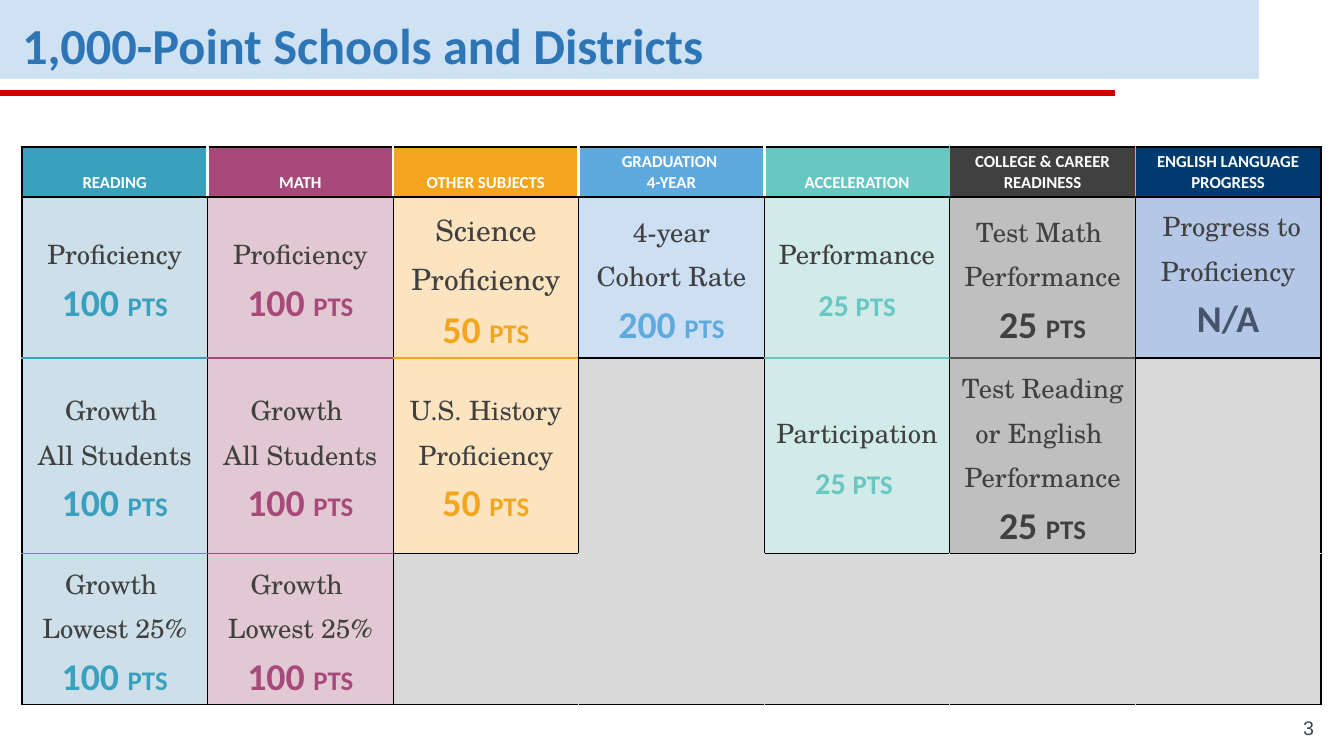
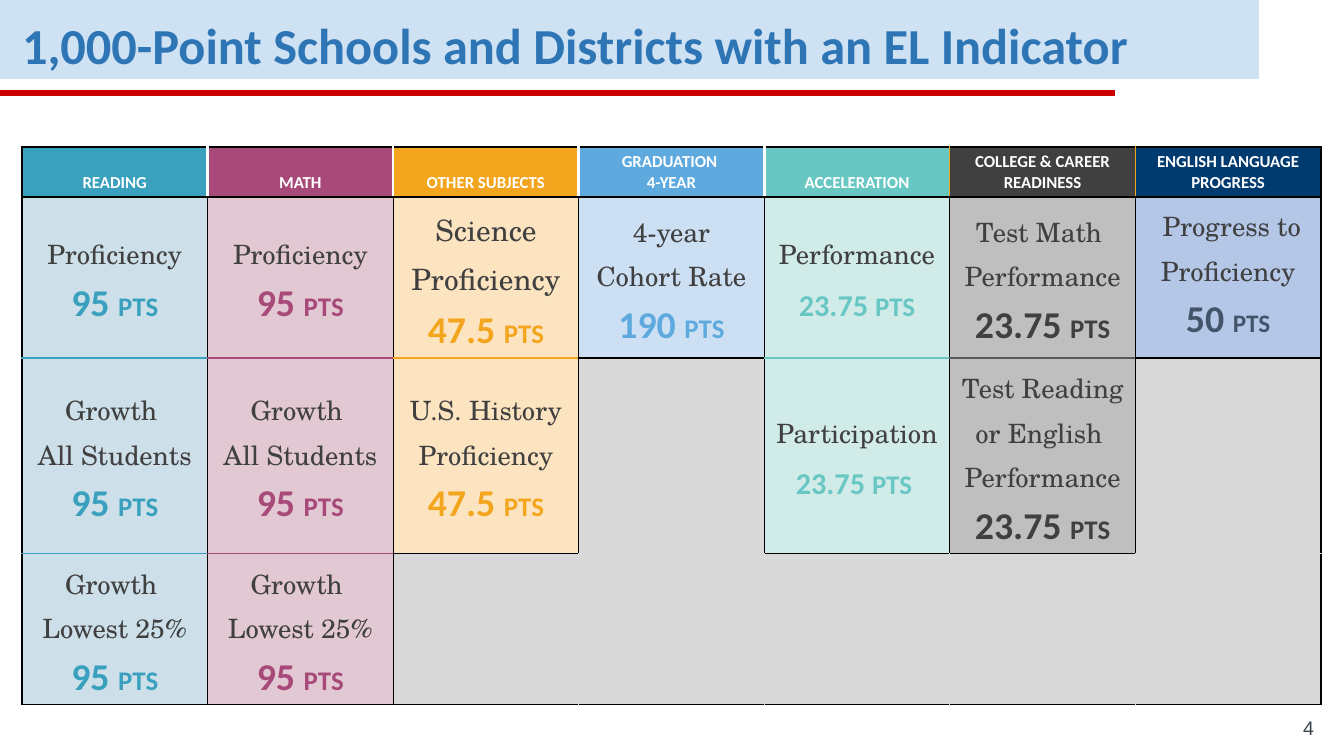
from dataclasses import dataclass

from lxml import etree
from pptx import Presentation
from pptx.dml.color import RGBColor
from pptx.enum import shapes, text
from pptx.oxml import ns
from pptx import util as u

EMU_PER_PX = 914400 / 100.8
HEADING_FONT = "Calibri"
LABEL_FONT = "TeX Gyre Schola"
COLORS = {
    "band": "CFE2F3", "rule": "CC0000", "title": "2E75B6", "number": "3A484F",
    "white": "FFFFFF", "black": "000000", "label": "404040",
    "empty": "D9D9D9", "orange": "F3A51D",
}
ROW_HEIGHTS = (50, 161, 196, 151)


@dataclass(frozen=True)
class Span:
    text: str
    size: int
    small_caps: bool = False


@dataclass(frozen=True)
class Goal:
    label: str
    share: int = 0
    unit: str = "pts"
    size: int = 19


@dataclass(frozen=True)
class Column:
    heading: str
    accent: str
    tint: str
    goals: tuple[Goal, ...]
    points_color: str
    divider: str
    small_number: bool = False


@dataclass(frozen=True)
class Board:
    title: str
    number: int
    scale: float
    language_points: tuple[Span, ...]


@dataclass(frozen=True)
class Border:
    color: str
    width: float = 1


def core_goals() -> tuple[Goal, ...]:
    return (Goal("Proficiency", 100), Goal("Growth \nAll Students", 100),
            Goal("Growth \nLowest 25%", 100))


COLUMNS = (
    Column("READING", "39A0BE", "CDDFE9", core_goals(), "39A0BE", "39A0BE"),
    Column("MATH", "A74A7A", "E1C8D2", core_goals(), "A74A7A", "A74A7A"),
    Column("OTHER SUBJECTS", "F3A51D", "FCE4C1",
           (Goal("Science\nProficiency", 50, size=21),
            Goal("U.S. History Proficiency", 50)), "F3A51D", "F3A51D"),
    Column("GRADUATION \n4-YEAR", "5EAADE", "CCDFF3",
           (Goal("4-year Cohort Rate", 200),), "5EAADE", "000000"),
    Column("ACCELERATION", "68C7C3", "D1EBE9",
           (Goal("Performance", 25), Goal("Participation", 25, "pts ")),
           "68C7C3", "68C7C3", small_number=True),
    Column("COLLEGE & CAREER READINESS", "404040", "BFBFBF",
           (Goal("Test Math \nPerformance", 25),
            Goal("Test Reading or English \nPerformance", 25)), "404040", "595959"),
    Column("ENGLISH LANGUAGE PROGRESS", "003B70", "B4C7E7",
           (Goal(" Progress to Proficiency"),), "44546A", "000000"),
)
BOARDS = (
    Board("1,000-Point Schools and Districts", 3, 1, (Span("N/A", 27),)),
    Board("1,000-Point Schools and Districts with an EL Indicator", 4, 0.95,
          (Span("50 ", 27), Span("PTS", 18))),
)


def px(length: int) -> u.Emu:
    return u.Emu(round(length * EMU_PER_PX))


def style_font(font, name: str, size: int, color: str, bold: bool = False) -> None:
    font.name = name
    font.size = u.Pt(size)
    font.bold = bold
    font.color.rgb = RGBColor.from_string(color)


def paint(shape_or_cell, color: str) -> None:
    shape_or_cell.fill.solid()
    shape_or_cell.fill.fore_color.rgb = RGBColor.from_string(color)


def set_borders(cell, left: Border, right: Border, top: Border, bottom: Border) -> None:
    properties = cell._tc.get_or_add_tcPr()
    sides = {"a:lnL": left, "a:lnR": right, "a:lnT": top, "a:lnB": bottom}
    for position, (tag, border) in enumerate(sides.items()):
        line = etree.Element(ns.qn(tag), w=str(u.Pt(border.width)))
        fill = etree.SubElement(line, ns.qn("a:solidFill"))
        etree.SubElement(fill, ns.qn("a:srgbClr"), val=border.color)
        properties.insert(position, line)


def add_points(para, spans: tuple[Span, ...], color: str) -> None:
    for span in spans:
        run = para.add_run()
        run.text = span.text
        style_font(run.font, HEADING_FONT, span.size, color, bold=True)
        if span.small_caps:
            run._r.get_or_add_rPr().set("cap", "small")


def fill_heading(cell, index: int) -> None:
    column = COLUMNS[index]
    cell.vertical_anchor = text.MSO_ANCHOR.BOTTOM
    para = cell.text_frame.paragraphs[0]
    para.text = column.heading
    para.alignment = text.PP_ALIGN.CENTER
    for run in para.runs:
        style_font(run.font, HEADING_FONT, 12, COLORS["white"], bold=True)
    paint(cell, column.accent)
    black = Border(COLORS["black"])

    def separator(edge: int) -> Border:
        if edge in (0, len(COLUMNS)):
            return black
        return Border(COLORS["orange"]) if edge >= 5 else Border(COLORS["white"], 2.25)

    set_borders(cell, separator(index), separator(index + 1), black, black)


def fill_goal(cell, column: Column, row: int, board: Board) -> None:
    goal = column.goals[row]
    frame = cell.text_frame
    para = frame.paragraphs[0]
    para.text = goal.label
    for run in para.runs:
        style_font(run.font, LABEL_FONT, goal.size, COLORS["label"])
    if goal.share:
        cell.vertical_anchor = text.MSO_ANCHOR.MIDDLE
        para.add_line_break()
        spans = (Span(f"{goal.share * board.scale:g} ", 27, column.small_number),
                 Span(goal.unit, 24, True))
        add_points(para, spans, column.points_color)
    else:
        cell.vertical_anchor = text.MSO_ANCHOR.TOP
        add_points(frame.add_paragraph(), board.language_points, column.points_color)
    for para in frame.paragraphs:
        para.alignment = text.PP_ALIGN.CENTER
        para.line_spacing = 1.15
    paint(cell, column.tint)
    black, divider = Border(COLORS["black"]), Border(column.divider)
    set_borders(cell, black, black, divider if row else black,
                divider if row + 1 < len(column.goals) else black)


def fill_empty(cell, index: int, row: int) -> None:
    def edge(neighbor: int, neighbor_row: int) -> Border:
        inside = neighbor < len(COLUMNS) and neighbor_row < len(ROW_HEIGHTS) - 1
        blank = inside and neighbor_row >= len(COLUMNS[neighbor].goals)
        return Border(COLORS["empty" if blank else "black"])

    paint(cell, COLORS["empty"])
    set_borders(cell, edge(index - 1, row), edge(index + 1, row),
                edge(index, row - 1), edge(index, row + 1))


def add_points_table(page, board: Board) -> None:
    frame = page.shapes.add_table(len(ROW_HEIGHTS), len(COLUMNS), px(22), px(147),
                                  px(1299), px(sum(ROW_HEIGHTS)))
    table = frame.table
    table.first_row = table.horz_banding = False
    for row, height in zip(table.rows, ROW_HEIGHTS):
        row.height = px(height)
    for index, column in enumerate(COLUMNS):
        for line in range(len(ROW_HEIGHTS)):
            cell = table.cell(line, index)
            cell.margin_left = cell.margin_right = px(9)
            cell.margin_top = cell.margin_bottom = px(4)
            if line == 0:
                fill_heading(cell, index)
            elif line <= len(column.goals):
                fill_goal(cell, column, line - 1, board)
            else:
                fill_empty(cell, index, line - 1)


def set_text(box, content: str, anchor, alignment):
    frame = box.text_frame
    frame.word_wrap = True
    frame.auto_size = text.MSO_AUTO_SIZE.NONE
    frame.vertical_anchor = anchor
    frame.margin_left = frame.margin_right = px(13)
    frame.margin_top = frame.margin_bottom = px(13)
    para = frame.paragraphs[0]
    para.text = content
    para.alignment = alignment
    return para


def add_bands(page, layout) -> None:
    bands = ((0, 1259, 79, "band"), (90, 1115, 6, "rule"))
    for position, (top, width, height, color) in enumerate(bands, start=2):
        band = page.shapes.add_shape(shapes.MSO_SHAPE.RECTANGLE, 0, px(top),
                                     px(width), px(height))
        band.shadow.inherit = False
        paint(band, COLORS[color])
        band.line.fill.background()
        layout.shapes._spTree.insert(position, band._element)


def add_page(deck, layout, board: Board):
    page = deck.slides.add_slide(layout)
    title = page.shapes.title
    title.left, title.top, title.width, title.height = px(9), px(4), px(1225), px(72)
    para = set_text(title, board.title, text.MSO_ANCHOR.MIDDLE, text.PP_ALIGN.LEFT)
    para.line_spacing = 1.15
    style_font(para.font, HEADING_FONT, 36, COLORS["title"], bold=True)
    number = page.shapes.add_textbox(px(1246), px(718), px(81), px(34))
    para = set_text(number, str(board.number), text.MSO_ANCHOR.BOTTOM, text.PP_ALIGN.RIGHT)
    style_font(para.font, "Arial", 14, COLORS["number"])
    add_points_table(page, board)
    return page


def main() -> None:
    deck = Presentation()
    deck.slide_width, deck.slide_height = px(1344), px(756)
    layout = deck.slide_layouts[5]
    pages = [add_page(deck, layout, board) for board in BOARDS]
    add_bands(pages[0], layout)
    deck.save("out.pptx")


if __name__ == "__main__":
    main()
